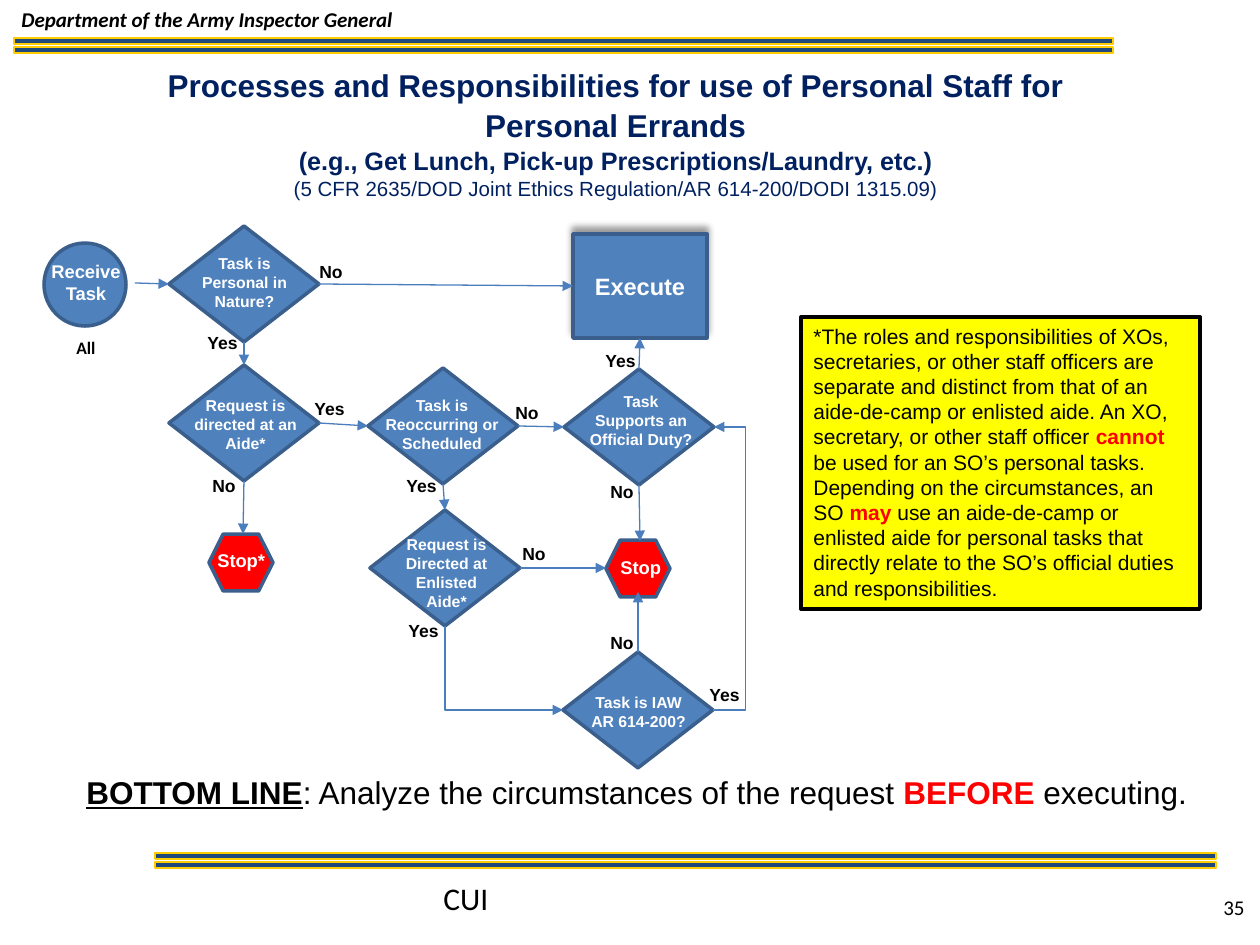
import copy

import pptx
import pptx.dml.color
import pptx.enum.shapes
import pptx.enum.text
import pptx.oxml
import pptx.oxml.ns
import pptx.util

RGB = pptx.dml.color.RGBColor
SHAPE = pptx.enum.shapes.MSO_SHAPE
LINK = pptx.enum.shapes.MSO_CONNECTOR
ALIGN = pptx.enum.text.PP_ALIGN
ANCHOR = pptx.enum.text.MSO_ANCHOR
FIT = pptx.enum.text.MSO_AUTO_SIZE

BLACK = RGB(0x00, 0x00, 0x00)
WHITE = RGB(0xFF, 0xFF, 0xFF)
RED = RGB(0xFF, 0x00, 0x00)
YELLOW = RGB(0xFF, 0xFF, 0x00)
GOLD = RGB(0xFF, 0xCC, 0x00)
NAVY = RGB(0x00, 0x20, 0x60)
BAND = RGB(0x1F, 0x49, 0x7D)
BLUE = RGB(0x4F, 0x81, 0xBD)
EDGE = RGB(0x3A, 0x5F, 0x8C)
ARROW = RGB(0x4B, 0x7E, 0xBC)

TOP, LEFT, BOTTOM, RIGHT = range(4)
SCALE = 914400 / 126


def px(num):
    return pptx.util.Emu(round(num * SCALE))


def node(xml):
    """Parse a DrawingML element given without its namespace."""
    space = f' xmlns:a="{pptx.oxml.ns.nsdecls("a").split(chr(34))[1]}"'
    cut = min(i for i in (xml.find(" "), xml.find("/"), xml.find(">")) if i > 0)
    return pptx.oxml.parse_xml(xml[:cut] + space + xml[cut:])


class Page:
    def __init__(self, deck):
        self.slide = deck.slides.add_slide(deck.slide_layouts[5])
        self.shapes = self.slide.shapes

    def run(self, para, text, size, color=BLACK, bold=False, font="Arial",
            under=False, slant=False):
        run = para.add_run()
        run.text = text
        run.font.name, run.font.size = font, pptx.util.Pt(size)
        run.font.bold, run.font.italic, run.font.underline = bold, slant, under
        run.font.color.rgb = color
        return run

    def title(self, box, lines):
        """Set the title as one paragraph of (text, size, bold) lines."""
        shape = self.shapes.title
        shape.left, shape.top, shape.width, shape.height = map(px, box)
        frame = shape.text_frame
        frame.auto_size, frame.word_wrap = FIT.NONE, True
        frame.vertical_anchor = ANCHOR.TOP
        frame.margin_left, frame.margin_top = px(28), 0
        para = frame.paragraphs[0]
        para.alignment, para.line_spacing = ALIGN.CENTER, 1.05
        for i, (text, size, bold) in enumerate(lines):
            if i:
                para.add_line_break()
                para._p[-1].append(copy.deepcopy(run._r.rPr))
            run = self.run(para, text, size, NAVY, bold)

    def text(self, box, text, size, wrap=False, center=False, **style):
        shape = self.shapes.add_textbox(*map(px, box))
        frame = shape.text_frame
        frame.word_wrap = wrap
        for i, line in enumerate(text.split("\n")):
            para = frame.add_paragraph() if i else frame.paragraphs[0]
            para.alignment = ALIGN.CENTER if center else ALIGN.LEFT
            self.run(para, line, size, **style)
        return shape

    def label(self, x, y, text):
        self.text((x, y, 57 if text == "Yes" else 49, 34), text, 10, bold=True)

    def shape(self, kind, box, fill=BLUE, line=EDGE, width=2):
        shape = self.shapes.add_shape(kind, *map(px, box))
        shape.shadow.inherit = False
        shape.fill.solid()
        shape.fill.fore_color.rgb = fill
        shape.line.color.rgb = line
        shape.line.width = pptx.util.Pt(width)
        return shape

    def choice(self, x, y, text, box):
        shape = self.shape(SHAPE.FLOWCHART_DECISION, (x, y, 150, 116))
        self.text(box, text, 9, True, True, color=WHITE, bold=True)
        return shape

    def stop(self, x, y, text, box):
        self.shape(SHAPE.HEXAGON, (x, y, 64, 57), RED)
        self.text(box, text, 10.5, color=WHITE, bold=True)

    def link(self, start, end, kind=LINK.STRAIGHT):
        """Draw an arrow; each end is an (x, y) point or a (shape, side) pair."""
        free = [p if isinstance(p[0], int) else (0, 0) for p in (start, end)]
        line = self.shapes.add_connector(kind, *(px(n) for p in free for n in p))
        if not isinstance(start[0], int):
            line.begin_connect(*start)
        if not isinstance(end[0], int):
            line.end_connect(*end)
        line.line.color.rgb = ARROW
        line.line.width = pptx.util.Pt(0.75)
        line.line._get_or_add_ln().append(node('<a:tailEnd type="triangle"/>'))
        line._element.spPr.append(node("<a:effectLst/>"))
        return line

    def corner(self, x, y, right, down):
        """Draw an arrow that runs down and then to the right."""
        left, top = x + (right - down) // 2, y + (down - right) // 2
        line = self.link((left, top), (left + down, top + right), LINK.ELBOW)
        form = line._element.spPr
        form.prstGeom.set("prst", "bentConnector2")
        form.xfrm.set("rot", "16200000")
        form.xfrm.set("flipH", "1")

    def loop(self, start, end, out):
        """Draw an arrow that leaves and returns by the right, out px away."""
        line = self.link(start, end, LINK.ELBOW)
        share = round(out / (end[0] - start[0]) * 100000)
        guides = line._element.spPr.prstGeom.get_or_add_avLst()
        guides.append(node(f'<a:gd name="adj1" fmla="val {share}"/>'))


def main():
    deck = pptx.Presentation()
    deck.slide_width, deck.slide_height = px(1260), px(945)
    page = Page(deck)

    page.text((9, 0, 832, 38), "Department of the Army Inspector General", 12,
              font="Calibri", bold=True, slant=True)
    for x, y, wide in ((14, 38, 1099), (155, 853, 1061)):
        for gap in (0, 9):
            page.shape(SHAPE.RECTANGLE, (x, y + gap, wide, 6), BAND, GOLD, 0.75)
    page.text((1211, 888, 52, 38), "35", 12, font="Calibri")
    page.title((73, 64, 1070, 164), (
        ("Processes and Responsibilities for use of Personal Staff for "
         "Personal Errands", 18, True),
        ("(e.g., Get Lunch, Pick-up Prescriptions/Laundry, etc.)", 14.4, True),
        ("(5 CFR 2635/DOD Joint Ethics Regulation/AR 614-200/DODI 1315.09)",
         11.7, False)))

    execute = page.shape(SHAPE.RECTANGLE, (573, 234, 134, 104))
    execute._element.spPr.effectLst.append(node(
        '<a:outerShdw blurRad="50800" dist="38100" dir="16200000" rotWithShape="0">'
        '<a:srgbClr val="000000"><a:alpha val="40000"/></a:srgbClr></a:outerShdw>'))
    execute.text_frame.vertical_anchor = ANCHOR.MIDDLE
    para = execute.text_frame.paragraphs[0]
    para.alignment = ALIGN.CENTER
    page.run(para, "Execute", 13.5, WHITE, True)

    page.shape(SHAPE.FLOWCHART_CONNECTOR, (44, 243, 82, 83))
    page.text((38, 254, 96, 57), "Receive\nTask", 10.5, center=True,
              color=WHITE, bold=True)
    page.text((64, 331, 45, 34), "All", 10, font="Calibri", bold=True)

    nature = page.choice(169, 226, "Task is Personal in Nature?",
                         (178, 248, 133, 70))
    aide = page.choice(169, 365, "Request is directed at an Aide*",
                       (179, 390, 133, 70))
    plan = page.choice(368, 368, "Task is Reoccurring or Scheduled",
                       (373, 390, 138, 70))
    duty = page.choice(564, 369, "Task Supports an Official Duty?",
                       (576, 386, 130, 70))
    staff = page.choice(370, 510, "Request is Directed at Enlisted\nAide*",
                        (380, 529, 133, 89))
    rule = page.choice(563, 652, "Task is IAW AR 614-200?", (572, 687, 133, 50))
    page.stop(209, 534, "Stop*", (205, 543, 74, 35))
    page.stop(606, 540, "Stop", (608, 550, 67, 35))

    for start, end in (
            ((135, 283), (nature, LEFT)),
            ((nature, RIGHT), (execute, LEFT)),
            ((nature, BOTTOM), (aide, TOP)),
            ((aide, RIGHT), (plan, LEFT)),
            ((aide, BOTTOM), (243, 534)),
            ((plan, RIGHT), (duty, LEFT)),
            ((plan, BOTTOM), (staff, TOP)),
            ((duty, TOP), (execute, BOTTOM)),
            ((duty, BOTTOM), (640, 541)),
            ((staff, RIGHT), (606, 568)),
            ((rule, TOP), (638, 592))):
        page.link(start, end)
    page.corner(445, 626, 118, 84)
    page.loop((713, 710), (714, 427), 33)

    for x, y, text in (
            (307, 255, "No"), (302, 392, "Yes"), (200, 469, "No"),
            (394, 469, "Yes"), (503, 396, "No"), (598, 475, "No"),
            (593, 344, "Yes"), (195, 326, "Yes"), (396, 614, "Yes"),
            (510, 537, "No"), (697, 678, "Yes"), (598, 626, "No")):
        page.label(x, y, text)

    note = page.shape(SHAPE.RECTANGLE, (801, 317, 399, 292), YELLOW, BLACK, 2.25)
    note.text_frame.word_wrap = True
    note.text_frame.vertical_anchor = ANCHOR.TOP
    para = note.text_frame.paragraphs[0]
    para.alignment = ALIGN.LEFT
    for text, key in (
            ("*The roles and responsibilities of XOs, secretaries, or other staff "
             "officers are separate and distinct from that of an aide-de-camp or "
             "enlisted aide. An XO, secretary, or other staff officer ", False),
            ("cannot ", True),
            ("be used for an SO’s personal tasks. Depending on the "
             "circumstances, an SO ", False),
            ("may", True),
            (" use an aide-de-camp or enlisted aide for personal tasks that "
             "directly relate to the SO’s official duties and "
             "responsibilities.", False)):
        page.run(para, text, 12, RED if key else BLACK, key)

    close = page.text((74, 767, 1159, 51), "BOTTOM LINE", 18, bold=True, under=True)
    para = close.text_frame.paragraphs[0]
    page.run(para, ": Analyze the circumstances of the request ", 18)
    page.run(para, "BEFORE", 18, RED, True)
    page.run(para, " executing.", 18)
    page.text((431, 873, 399, 51), "CUI", 18, True, font="Calibri")
    deck.save("out.pptx")


if __name__ == "__main__":
    main()
